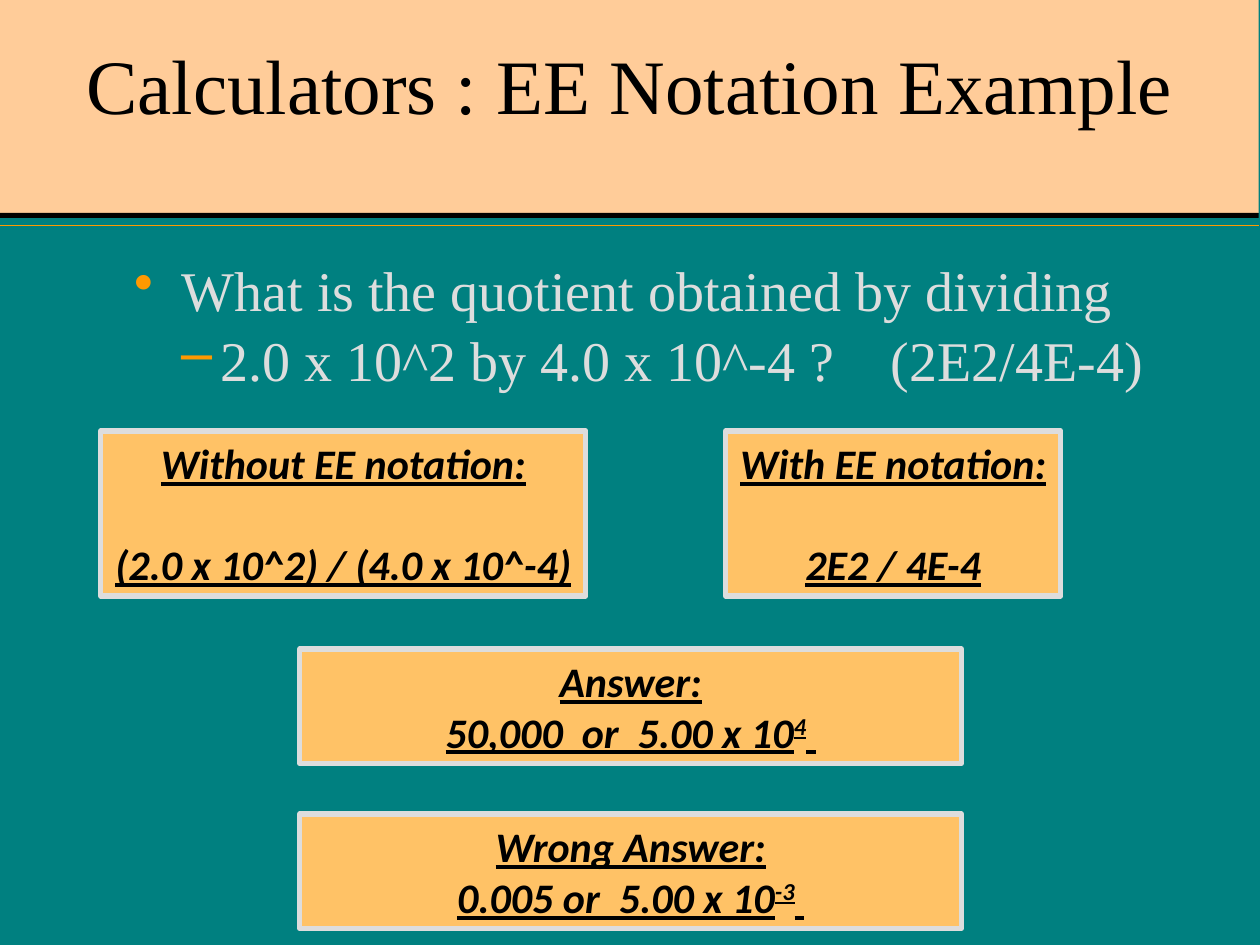
from lxml import etree
from pptx import Presentation
from pptx.dml.color import RGBColor
from pptx.enum.shapes import MSO_CONNECTOR, MSO_SHAPE
from pptx.enum.text import MSO_ANCHOR, PP_ALIGN
from pptx.oxml.ns import qn
from pptx.util import Inches, Pt

RECTANGLE = MSO_SHAPE.RECTANGLE
STRAIGHT = MSO_CONNECTOR.STRAIGHT
BOTTOM = MSO_ANCHOR.BOTTOM
MIDDLE = MSO_ANCHOR.MIDDLE
CENTER = PP_ALIGN.CENTER

COLORS = {
    "teal": "008080",
    "peach": "FFCC99",
    "card": "FFC266",
    "gray": "DDDDDD",
    "orange": "FF9900",
    "black": "000000",
}
SERIF = "Times New Roman"
SANS = "Calibri"


def color(name):
    return RGBColor.from_string(COLORS[name])


def add_rectangle(slide, box, fill):
    rectangle = slide.shapes.add_shape(RECTANGLE, *map(Inches, box))
    rectangle.shadow.inherit = False
    rectangle.fill.solid()
    rectangle.fill.fore_color.rgb = color(fill)
    rectangle.line.fill.background()
    return rectangle


def add_run(paragraph, text, font, size, tint, emphasis=False, **attributes):
    run = paragraph.add_run()
    run.text = text
    run.font.name = font
    run.font.size = Pt(size)
    run.font.color.rgb = color(tint)
    if emphasis:
        run.font.bold = run.font.italic = run.font.underline = True
    for key, value in attributes.items():
        run.font._element.set(key, str(value))


def add_bullet(paragraph, mark, margin, hanging):
    properties = paragraph._p.get_or_add_pPr()
    properties.set("marL", str(Inches(margin)))
    properties.set("indent", str(-Inches(hanging)))
    tint = etree.SubElement(properties, qn("a:buClr"))
    etree.SubElement(tint, qn("a:srgbClr"), val=COLORS["orange"])
    etree.SubElement(properties, qn("a:buChar"), char=mark)


def add_text_area(slide, box):
    frame = slide.shapes.add_textbox(*map(Inches, box)).text_frame
    frame.word_wrap = True
    frame.vertical_anchor = BOTTOM
    return frame


def add_header(slide, box):
    left, top, width, height = box
    add_rectangle(slide, box, "peach")
    add_rectangle(slide, (left, top + height, width, 0.04), "black")
    rule_y = Inches(top + height + 0.1)
    rule = slide.shapes.add_connector(
        STRAIGHT, Inches(left), rule_y, Inches(left + width), rule_y)
    rule.line.color.rgb = color("orange")
    rule.line.width = Pt(1)
    etree.SubElement(rule._element.spPr, qn("a:effectLst"))

    title = add_text_area(slide, (left + 0.5, top + 0.3, 9, 0.78)).paragraphs[0]
    title.alignment = CENTER
    add_run(title, "Calculators : EE Notation Example", SERIF, 44, "black")


def add_question(slide, box):
    frame = add_text_area(slide, box)
    prompt = frame.paragraphs[0]
    prompt.alignment = CENTER
    add_bullet(prompt, "•", 0.38, 0.38)
    add_run(prompt, "What is the quotient obtained by dividing ", SERIF, 32, "gray")

    division = frame.add_paragraph()
    division.alignment = CENTER
    division.level = 1
    division.space_before = Pt(2)
    add_bullet(division, "–", 0.81, 0.31)
    add_run(division, "2.0 x 10^2 by 4.0 x 10^-4 ?", SERIF, 32, "gray")
    add_run(division, " ", SERIF, 32, "gray", spc=2400)
    add_run(division, "(2E2/4E-4)", SERIF, 32, "gray")


def add_card(slide, box, heading, value, exponent="", gap=0):
    card = add_rectangle(slide, box, "card")
    card.line.color.rgb = color("gray")
    card.line.width = Pt(3)
    frame = card.text_frame
    frame.word_wrap = False
    frame.vertical_anchor = MIDDLE
    title = frame.paragraphs[0]
    result = frame.add_paragraph()
    title.alignment = result.alignment = CENTER
    result.space_before = Pt(gap)
    add_run(title, heading, SANS, 24, "black", True)
    add_run(result, value, SANS, 24, "black", True)
    if exponent:
        add_run(result, exponent, SANS, 24, "black", True, baseline=30000)
        add_run(result, " ", SANS, 24, "black", True)


def main():
    deck = Presentation()
    deck.slide_width, deck.slide_height = Inches(10), Inches(7.5)
    slide = deck.slides.add_slide(deck.slide_layouts[6])
    slide.background.fill.solid()
    slide.background.fill.fore_color.rgb = color("teal")

    add_header(slide, (0, 0, 9.99, 1.69))
    add_question(slide, (0.38, 1.86, 9.25, 1.31))
    add_card(slide, (0.8, 3.42, 3.85, 1.31), "Without EE notation:",
             "(2.0 x 10^2) / (4.0 x 10^-4)", gap=29)
    add_card(slide, (5.76, 3.42, 2.66, 1.31), "With EE notation:",
             "2E2 / 4E-4", gap=29)
    add_card(slide, (2.38, 5.15, 5.25, 0.91), "Answer:",
             "50,000  or  5.00 x 10", "4")
    add_card(slide, (2.38, 6.46, 5.25, 0.91), "Wrong Answer:",
             "0.005 or  5.00 x 10", "-3")
    deck.save("out.pptx")


if __name__ == "__main__":
    main()
